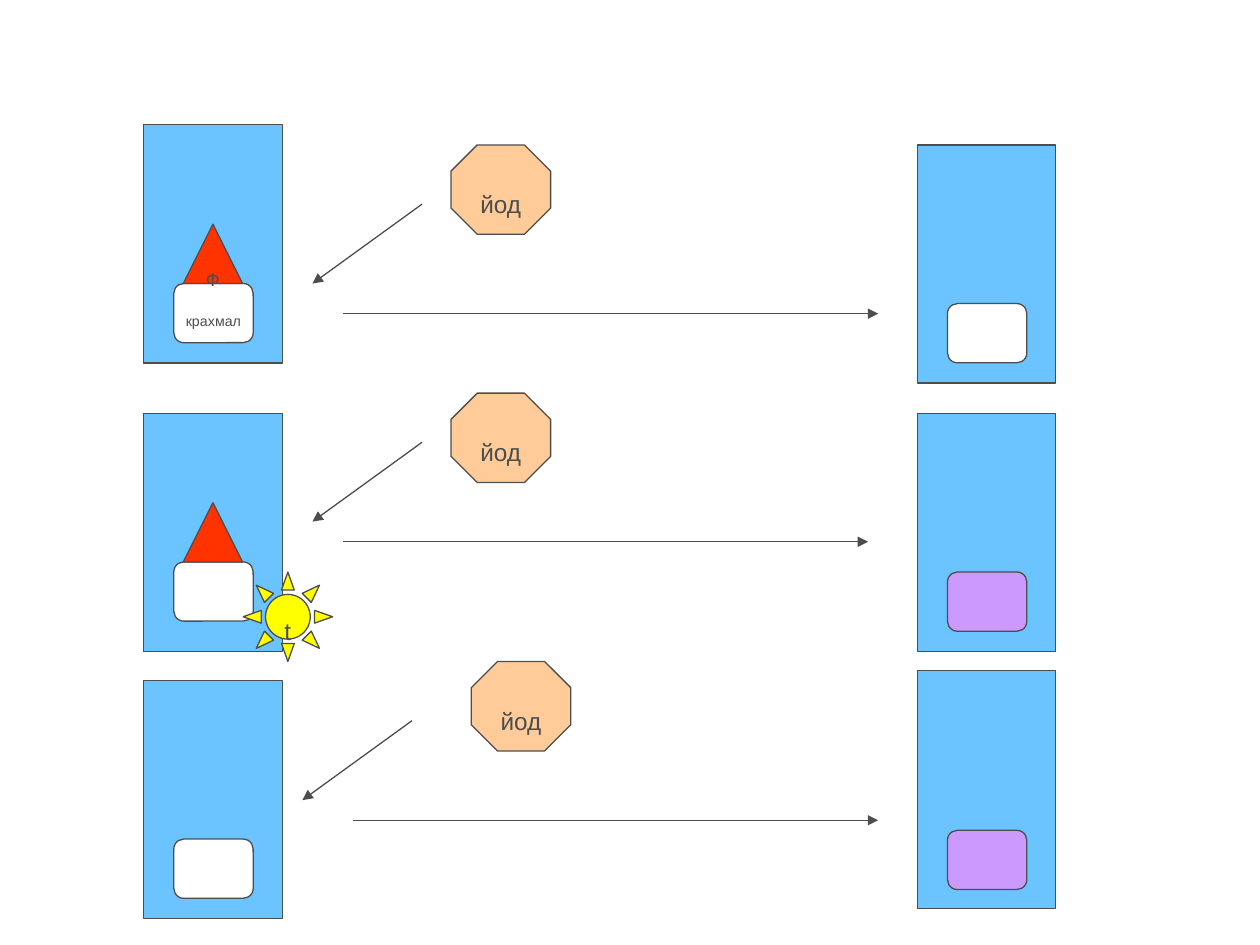
from dataclasses import dataclass

from lxml import etree
from pptx import Presentation
from pptx.dml.color import RGBColor
from pptx.enum.shapes import MSO_CONNECTOR, MSO_SHAPE
from pptx.enum.text import MSO_ANCHOR, PP_ALIGN
from pptx.oxml.ns import qn
from pptx.util import Inches, Pt

RECT = MSO_SHAPE.RECTANGLE
ROUNDED = MSO_SHAPE.ROUNDED_RECTANGLE
TRIANGLE = MSO_SHAPE.ISOSCELES_TRIANGLE
OCTAGON = MSO_SHAPE.OCTAGON
SUN = MSO_SHAPE.SUN
STRAIGHT = MSO_CONNECTOR.STRAIGHT
MIDDLE = MSO_ANCHOR.MIDDLE
CENTER = PP_ALIGN.CENTER

BLUE = RGBColor(0x6B, 0xC4, 0xFF)
WHITE = RGBColor(0xFF, 0xFF, 0xFF)
PURPLE = RGBColor(0xCC, 0x99, 0xFF)
RED = RGBColor(0xFF, 0x33, 0x00)
YELLOW = RGBColor(0xFF, 0xFF, 0x00)
PEACH = RGBColor(0xFF, 0xCC, 0x99)
GRAY = RGBColor(0x4D, 0x4D, 0x4D)

FONT = "Arial"
LINE_WIDTH = Pt(0.75)
TUBE_W, TUBE_H = 1.1, 1.89
STARCH_W, STARCH_H = 0.63, 0.47
STARCH_INSET = 0.24
ENZYME = 0.47
START_X, RESULT_X = 1.14, 7.28
DROP_DX, DROP_DY = -0.87, 0.63


@dataclass
class Experiment:
    """One row: starting tube, added iodine and resulting tube."""
    tube_y: float
    starch_y: float
    iodine: tuple[float, float]
    drop: tuple[float, float]
    reaction: tuple[float, float, float]  # x1, x2, y
    result_y: float
    result_starch_y: float
    result_color: RGBColor
    has_enzyme: bool = True
    starch_label: str = ""
    enzyme_label: str = ""


EXPERIMENTS = [
    Experiment(0.99, 2.25, (3.58, 1.15), (3.35, 1.62), (2.72, 6.97, 2.49),
               1.15, 2.41, WHITE, starch_label="крахмал", enzyme_label="Ф"),
    Experiment(3.28, 4.46, (3.58, 3.12), (3.35, 3.51), (2.72, 6.89, 4.3),
               3.28, 4.54, PURPLE),
    Experiment(5.4, 6.66, (3.74, 5.25), (3.27, 5.72), (2.8, 6.97, 6.51),
               5.32, 6.59, PURPLE, has_enzyme=False),
]


def add_figure(slide, kind, x: float, y: float, w: float, h: float,
               fill: RGBColor, label: str = "", size: int = 24) -> None:
    sp = slide.shapes.add_shape(kind, Inches(x), Inches(y), Inches(w), Inches(h))
    sp.shadow.inherit = False
    sp.fill.solid()
    sp.fill.fore_color.rgb = fill
    sp.line.color.rgb = GRAY
    sp.line.width = LINE_WIDTH
    if not label:
        return
    tf = sp.text_frame
    tf.text = label
    tf.word_wrap = False
    tf.vertical_anchor = MIDDLE
    p = tf.paragraphs[0]
    p.alignment = CENTER
    font = p.runs[0].font
    font.name = FONT
    font.size = Pt(size)
    font.color.rgb = GRAY
    font._element.set("baseline", "-25000")  # subscript


def add_arrow(slide, x1: float, y1: float, x2: float, y2: float) -> None:
    arrow = slide.shapes.add_connector(
        STRAIGHT, Inches(x1), Inches(y1), Inches(x2), Inches(y2))
    arrow.line.color.rgb = GRAY
    arrow.line.width = LINE_WIDTH
    ln = arrow.line._get_or_add_ln()
    etree.SubElement(ln, qn("a:tailEnd"), type="triangle")
    etree.SubElement(arrow._element.spPr, qn("a:effectLst"))


def add_tube(slide, x: float, y: float, starch_y: float,
             color: RGBColor, label: str = "") -> None:
    add_figure(slide, RECT, x, y, TUBE_W, TUBE_H, BLUE)
    add_figure(slide, ROUNDED, x + STARCH_INSET, starch_y,
               STARCH_W, STARCH_H, color, label, 14)


def add_experiment(slide, e: Experiment) -> None:
    # Starting tube with starch and, where used, the enzyme on top of it
    add_tube(slide, START_X, e.tube_y, e.starch_y, WHITE, e.starch_label)
    if e.has_enzyme:
        add_figure(slide, TRIANGLE, START_X + (TUBE_W - ENZYME) / 2,
                   e.starch_y - ENZYME, ENZYME, ENZYME, RED, e.enzyme_label, 18)

    # Iodine and the arrows
    add_figure(slide, OCTAGON, *e.iodine, 0.79, 0.71, PEACH, "йод")
    x, y = e.drop
    add_arrow(slide, x, y, x + DROP_DX, y + DROP_DY)
    x1, x2, y = e.reaction
    add_arrow(slide, x1, y, x2, y)

    # Resulting tube
    add_tube(slide, RESULT_X, e.result_y, e.result_starch_y, e.result_color)


def main() -> None:
    prs = Presentation()
    prs.slide_width, prs.slide_height = Inches(10), Inches(7.5)
    slide = prs.slides.add_slide(prs.slide_layouts[6])
    for experiment in EXPERIMENTS:
        add_experiment(slide, experiment)
    # Heating of the second tube
    add_figure(slide, SUN, 1.93, 4.54, 0.71, 0.71, YELLOW, "t")
    prs.save("out.pptx")


if __name__ == "__main__":
    main()
